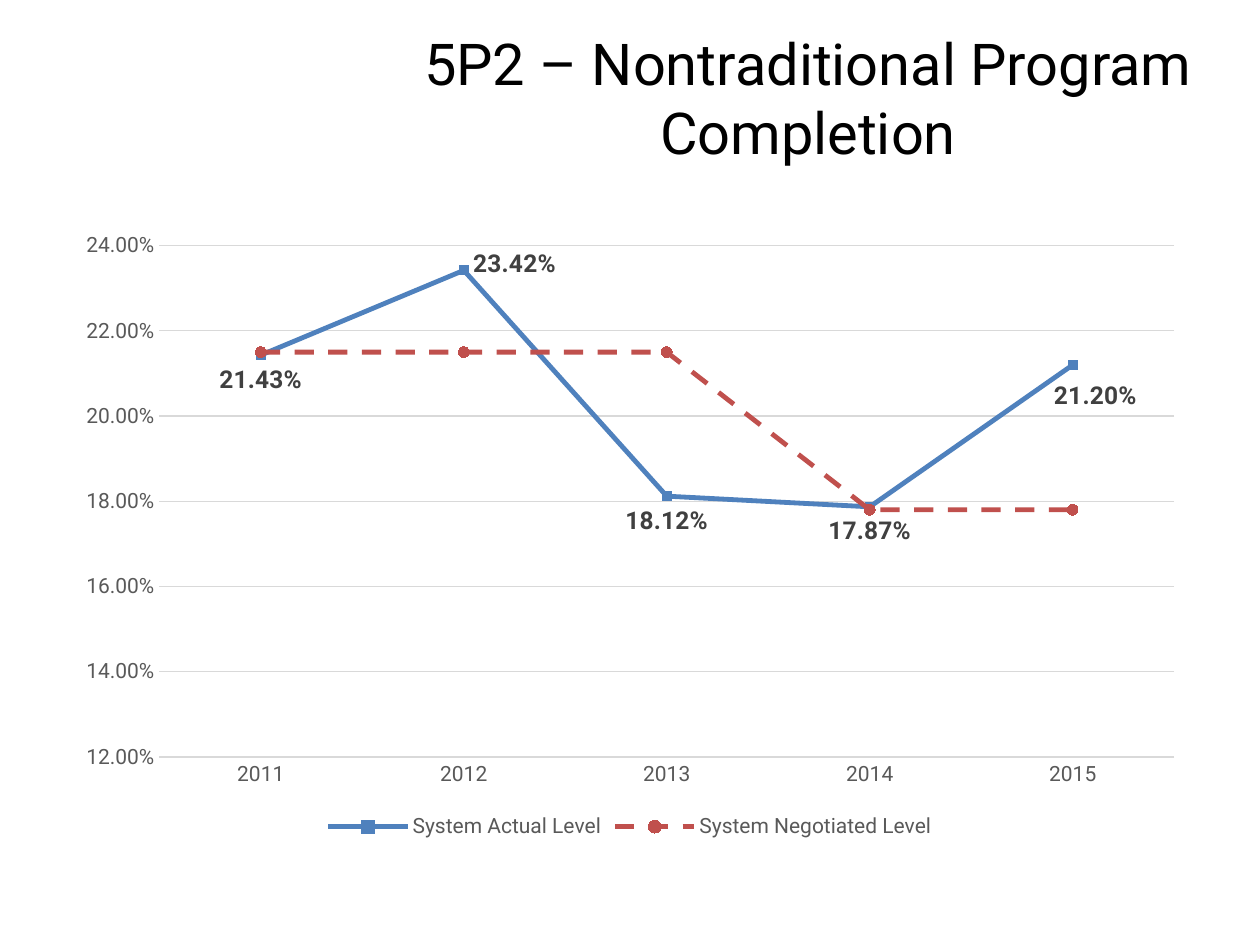
"""Build the 5P2 nontraditional program completion slide."""
from dataclasses import dataclass
from typing import Optional

from lxml import etree
from pptx import Presentation
from pptx import util as u
from pptx.chart.data import CategoryChartData
from pptx.dml.color import RGBColor
from pptx.enum import chart as charts, dml, text
from pptx.oxml.ns import qn

FONT = "Roboto"
PERCENT = "0.00%"
COLORS = {
    "title": "000000",
    "axis": "595959",
    "grid": "D9D9D9",
    "label": "404040",
    "actual": "4F81BD",
    "actual_marker": "3D7CC7",
    "negotiated": "C0504D",
    "negotiated_marker": "CB3E3A",
}
YEARS = ["2011", "2012", "2013", "2014", "2015"]


@dataclass(frozen=True)
class Level:
    name: str
    values: tuple
    color: str
    marker: charts.XL_MARKER_STYLE
    marker_size: int
    dash: Optional[dml.MSO_LINE] = None


@dataclass(frozen=True)
class MovedLabel:
    point: int
    position: charts.XL_LABEL_POSITION
    x: float
    y: float


LEVELS = [
    Level("System Actual Level", (0.2143, 0.2342, 0.1812, 0.1787, 0.212),
          "actual", charts.XL_MARKER_STYLE.SQUARE, 5),
    Level("System Negotiated Level", (0.215, 0.215, 0.215, 0.178, 0.178),
          "negotiated", charts.XL_MARKER_STYLE.CIRCLE, 6, dml.MSO_LINE.DASH),
]
MOVED_LABELS = [
    MovedLabel(1, charts.XL_LABEL_POSITION.RIGHT, 0, -0.01),
    MovedLabel(4, charts.XL_LABEL_POSITION.BELOW, 0.02, 0.01),
]


def rgb(name: str) -> RGBColor:
    return RGBColor.from_string(COLORS[name])


def style_font(font, size: float, color: str, bold: bool = False) -> None:
    font.name, font.size, font.bold = FONT, u.Pt(size), bold
    font.color.rgb = rgb(color)


def style_line(line, color: str, width: float) -> None:
    line.color.rgb = rgb(color)
    line.width = u.Pt(width)


def manual_layout(**settings) -> etree._Element:
    layout = etree.Element(qn("c:layout"))
    manual = etree.SubElement(layout, qn("c:manualLayout"))
    for tag, value in settings.items():
        etree.SubElement(manual, qn(f"c:{tag}")).set("val", str(value))
    return layout


def add_title(slide, wording: str) -> None:
    title = slide.shapes.title
    title.left, title.top = u.Cm(7.82), u.Cm(0.64)
    title.width, title.height = u.Cm(16.94), u.Cm(2.62)
    frame = title.text_frame
    frame.text = wording
    frame.word_wrap = True
    frame.auto_size = text.MSO_AUTO_SIZE.NONE
    frame.vertical_anchor = text.MSO_ANCHOR.MIDDLE
    para = frame.paragraphs[0]
    para.alignment = text.PP_ALIGN.CENTER
    style_font(para.font, 33, "title")


def style_axes(chart) -> None:
    for axis in (chart.category_axis, chart.value_axis):
        axis.major_tick_mark = axis.minor_tick_mark = charts.XL_TICK_MARK.NONE
        style_font(axis.tick_labels.font, 12, "axis")
    style_line(chart.category_axis.format.line, "grid", 1)
    values = chart.value_axis
    values.minimum_scale, values.maximum_scale, values.major_unit = 0.12, 0.24, 0.02
    values.tick_labels.number_format = PERCENT
    values.tick_labels.number_format_is_linked = False
    values.format.line.fill.background()
    style_line(values.major_gridlines.format.line, "grid", 0.75)


def style_series(series, level: Level) -> None:
    series.smooth = False
    style_line(series.format.line, level.color, 2.75)
    if level.dash:
        series.format.line.dash_style = level.dash
    marker = series.marker
    marker.style, marker.size = level.marker, level.marker_size
    marker.format.fill.solid()
    marker.format.fill.fore_color.rgb = rgb(f"{level.color}_marker")
    marker.format.line.color.rgb = rgb(level.color)


def label_series(chart, series) -> None:
    labels = series.data_labels
    labels.show_value = True
    labels.number_format, labels.number_format_is_linked = PERCENT, False
    labels.position = charts.XL_LABEL_POSITION.BELOW
    style_font(labels.font, 14, "label", bold=True)
    for moved in MOVED_LABELS:
        label = series.points[moved.point].data_label
        style_font(label.font, 14, "label", bold=True)
        label.position = moved.position
    for element, moved in zip(chart.element.xpath(".//c:dLbl"), MOVED_LABELS):
        element.insert(1, manual_layout(x=moved.x, y=moved.y))


def add_level_chart(slide) -> None:
    data = CategoryChartData(number_format=PERCENT)
    data.categories = YEARS
    for level in LEVELS:
        data.add_series(level.name, level.values)
    chart = slide.shapes.add_chart(
        charts.XL_CHART_TYPE.LINE_MARKERS, u.Cm(1.27), u.Cm(4.45),
        u.Cm(22.86), u.Cm(12.57), data).chart
    style_font(chart.font, 10, "title")
    chart.has_title = False
    chart.has_legend = True
    chart.legend.position = charts.XL_LEGEND_POSITION.BOTTOM
    chart.legend.include_in_layout = False
    style_font(chart.legend.font, 12, "axis")
    chart.plots[0].vary_by_categories = False
    style_axes(chart)
    for series, level in zip(chart.plots[0].series, LEVELS):
        style_series(series, level)
    label_series(chart, chart.plots[0].series[0])
    area = chart.element.xpath(".//c:plotArea")[0]
    for layout in area.findall(qn("c:layout")):
        area.remove(layout)
    area.insert(0, manual_layout(
        layoutTarget="inner", xMode="edge", yMode="edge",
        x=0.085, y=0.04, w=0.895, h=0.82))


def main() -> None:
    deck = Presentation()
    deck.slide_width, deck.slide_height = u.Cm(25.4), u.Cm(19.05)
    slide = deck.slides.add_slide(deck.slide_layouts.get_by_name("Title Only"))
    add_title(slide, "5P2 – Nontraditional Program Completion")
    add_level_chart(slide)
    deck.save("out.pptx")


if __name__ == "__main__":
    main()
